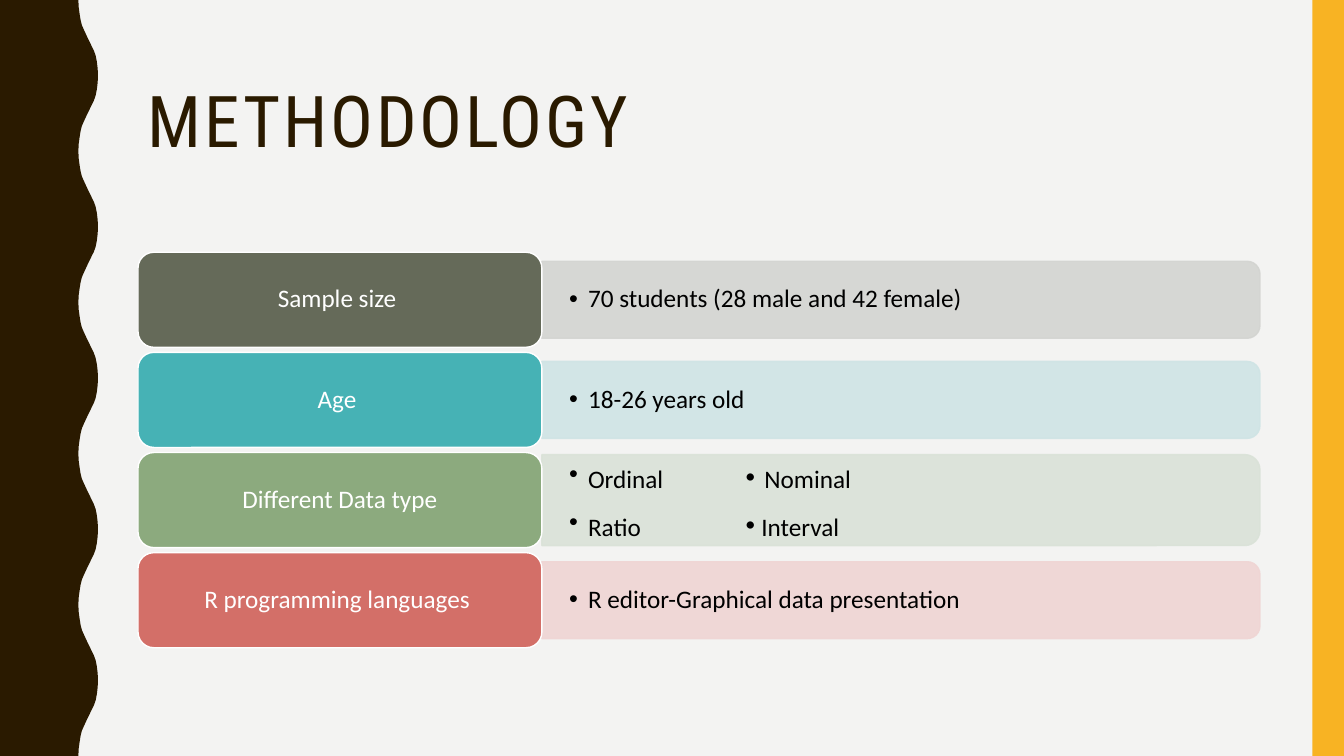
from lxml import etree
from pptx import Presentation
from pptx import util as u
from pptx.dml.color import RGBColor
from pptx.enum import shapes, text
from pptx.oxml.ns import qn

Pt = u.Pt
SLIDE_WIDTH, SLIDE_HEIGHT = 960, 540
BROWN, AMBER, PAPER, WHITE, BLACK = "2A1A00", "F8B323", "F3F3F2", "FFFFFF", "000000"

# Half a wave of the left edge, from its trough to its crest
WAVE_HALF = [(56, 0), (56.2, 5), (56.9, 10), (57.6, 14.4), (58.5, 18), (59.8, 21),
             (61.2, 24), (62.6, 27), (64.1, 30), (65.5, 33), (67, 36), (68.3, 39.6),
             (69.2, 44), (69.8, 49), (70, 54)]
WAVE_PERIOD = 108
UNITS_PER_POINT = 100

# Label, label colour, bar colour, bar height, paragraphs of (text, size, bold) runs
ROWS = [
    ("Sample size ", "656A59", "D3D4D1", 55,
     [[("70 students (28 male and 42 female)", 18, False)]]),
    ("Age ", "46B2B5", "CFE4E5", 55,
     [[("18-26 years old", 18, False)]]),
    ("Different Data type", "8CAA7E", "DAE2D8", 65,
     [[("Ordinal\t", 18, False), ("· ", 28, True), ("Nominal", 18, False)],
      [("Ratio\t", 18, False), ("·", 28, True), (" ", 18, True), ("Interval", 18, False)]]),
    ("R programming languages ", "D36F68", "EFD5D4", 55,
     [[("R editor-Graphical data presentation", 18, False)]]),
]


def color(hex_string):
    return RGBColor.from_string(hex_string)


def paint(shape, fill, line=None):
    shape.shadow.inherit = False
    shape.fill.solid()
    shape.fill.fore_color.rgb = color(fill)
    if line:
        shape.line.color.rgb = color(line)
        shape.line.width = Pt(1)
    else:
        shape.line.fill.background()


def set_opacity(shape, percent):
    """Apply one opacity to the fill and the line of a painted shape."""
    for solid in shape._element.spPr.iter(qn("a:solidFill")):
        etree.SubElement(solid[0], qn("a:alpha"), val=str(percent * 1000))


def set_frame(shape, horizontal_inset, vertical_inset):
    frame = shape.text_frame
    frame.word_wrap = True
    frame.vertical_anchor = text.MSO_ANCHOR.MIDDLE
    frame.margin_left = frame.margin_right = Pt(horizontal_inset)
    frame.margin_top = frame.margin_bottom = Pt(vertical_inset)
    return frame


def add_run(paragraph, words, size, fill, font="Calibri", bold=False):
    paragraph.line_spacing = 0.9
    run = paragraph.add_run()
    run.text = words
    run.font.name = font
    run.font.size = Pt(size)
    run.font.bold = bold
    run.font.color.rgb = color(fill)
    return run


def set_bullet(paragraph, indent, tab_stop):
    properties = paragraph._p.get_or_add_pPr()
    properties.set("marL", str(Pt(indent)))
    properties.set("indent", str(-Pt(indent)))
    etree.SubElement(properties, qn("a:buFont"), typeface="Arial")
    etree.SubElement(properties, qn("a:buChar"), char="•")
    tabs = etree.SubElement(properties, qn("a:tabLst"))
    etree.SubElement(tabs, qn("a:tab"), pos=str(Pt(tab_stop)), algn="l")


def add_wavy_edge(slide, height):
    half_mirrored = [(x, WAVE_PERIOD - y) for x, y in reversed(WAVE_HALF[:-1])]
    wave = WAVE_HALF + half_mirrored
    edge = [(x, y + start) for start in range(0, height, WAVE_PERIOD) for x, y in wave]
    points = [(x * UNITS_PER_POINT, y * UNITS_PER_POINT) for x, y in edge + [(0, height)]]
    builder = slide.shapes.build_freeform(0, 0, scale=Pt(1) / UNITS_PER_POINT)
    builder.add_line_segments(points, close=True)
    paint(builder.convert_to_shape(), BROWN)


def add_side_band(slide, left, top, width, height):
    band = slide.shapes.add_shape(shapes.MSO_SHAPE.RECTANGLE,
                                  Pt(left), Pt(top), Pt(width), Pt(height))
    paint(band, AMBER)


def add_title(slide, left, top, width, height):
    box = slide.shapes.add_textbox(Pt(left), Pt(top), Pt(width), Pt(height))
    paragraph = set_frame(box, 7.2, 3.6).paragraphs[0]
    run = add_run(paragraph, "METHODOLOGY", 51, BROWN, "Roboto Condensed")
    run.font._element.set("spc", "200")


def add_bar(slide, left, middle, width, height, fill, paragraphs):
    """Draw a bar rounded on its right side, with bulleted text over it."""
    bar = slide.shapes.add_shape(
        shapes.MSO_SHAPE.ROUND_2_SAME_RECTANGLE,
        Pt(left + (width - height) / 2), Pt(middle - width / 2), Pt(height), Pt(width))
    bar.rotation = 90
    paint(bar, fill, fill)
    set_opacity(bar, 90)

    box = slide.shapes.add_textbox(Pt(left), Pt(middle - height / 2), Pt(width), Pt(height))
    frame = set_frame(box, 19.5, 9.75)
    for index, runs in enumerate(paragraphs):
        paragraph = frame.add_paragraph() if index else frame.paragraphs[0]
        paragraph.space_after = Pt(4.2)
        for words, size, bold in runs:
            add_run(paragraph, words, size, BLACK, bold=bold)
        set_bullet(paragraph, 13.5, 125.7)


def add_label(slide, left, top, width, height, fill, words):
    label = slide.shapes.add_shape(shapes.MSO_SHAPE.ROUNDED_RECTANGLE,
                                   Pt(left), Pt(top), Pt(width), Pt(height))
    paint(label, fill, WHITE)
    paragraph = set_frame(label, 8, 6).paragraphs[0]
    paragraph.alignment = text.PP_ALIGN.CENTER
    add_run(paragraph, words, 18, WHITE)


def add_method_rows(slide, left, top, width, height):
    gap = 3.6
    label_width = width * 0.36
    label_height = (height - gap * (len(ROWS) - 1)) / len(ROWS)
    for index, (words, label_fill, bar_fill, bar_height, paragraphs) in enumerate(ROWS):
        row_top = top + index * (label_height + gap)
        add_bar(slide, left + label_width, row_top + label_height / 2,
                width - label_width, bar_height, bar_fill, paragraphs)
        add_label(slide, left, row_top, label_width, label_height, label_fill, words)


def main():
    presentation = Presentation()
    presentation.slide_width = Pt(SLIDE_WIDTH)
    presentation.slide_height = Pt(SLIDE_HEIGHT)
    slide = presentation.slides.add_slide(presentation.slide_layouts[6])
    slide.background.fill.solid()
    slide.background.fill.fore_color.rgb = color(PAPER)
    add_wavy_edge(slide, SLIDE_HEIGHT)
    add_side_band(slide, 937.5, 0, 22.5, SLIDE_HEIGHT)
    add_title(slide, 98.6, 30, 801.4, 117.5)
    add_method_rows(slide, 98.6, 180.2, 801.4, 282.5)
    presentation.save("out.pptx")


if __name__ == "__main__":
    main()
